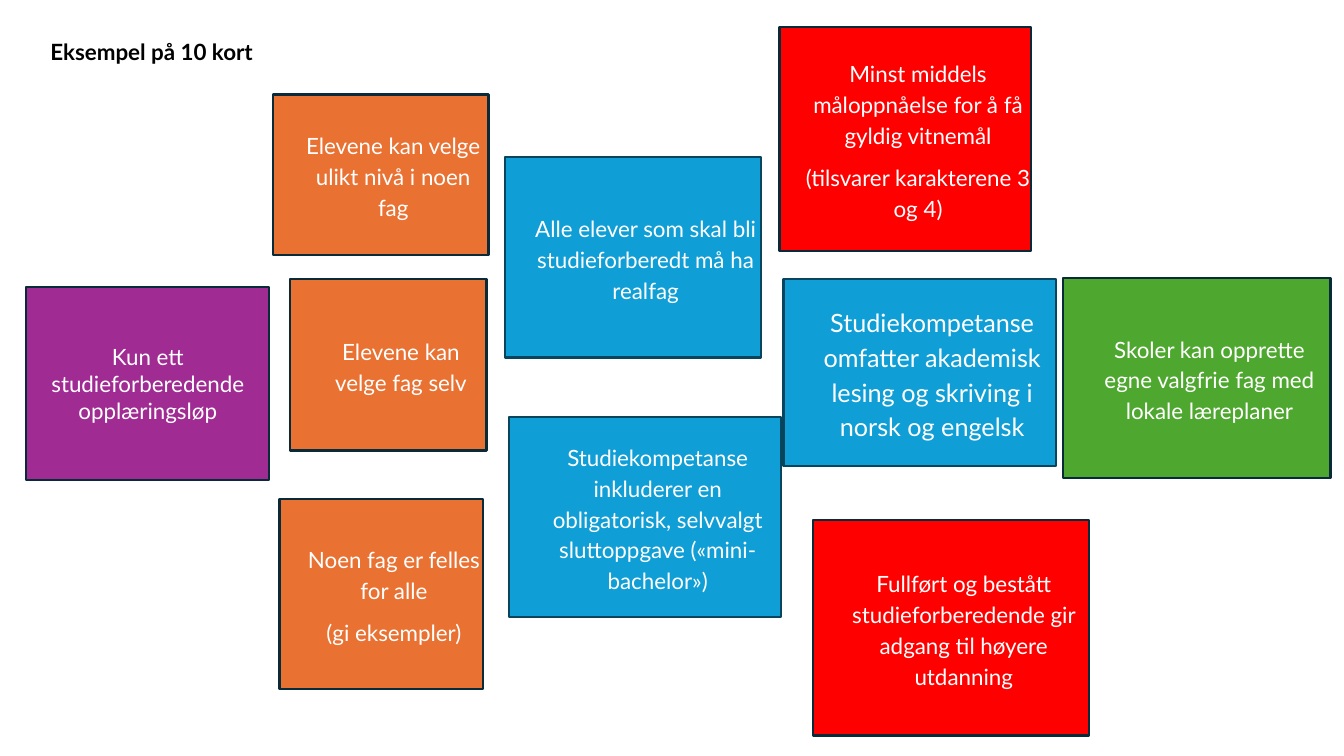
from dataclasses import dataclass

from pptx import Presentation
from pptx import util as u
from pptx.dml.color import RGBColor
from pptx.enum import shapes, text

WHITE = RGBColor(0xFF, 0xFF, 0xFF)
BLACK = RGBColor(0x00, 0x00, 0x00)
PURPLE = RGBColor(0xA0, 0x2B, 0x93)
ORANGE = RGBColor(0xE9, 0x71, 0x32)
BLUE = RGBColor(0x0F, 0x9E, 0xD5)
RED = RGBColor(0xFF, 0x00, 0x00)
GREEN = RGBColor(0x4E, 0xA7, 0x2E)
DARK_EDGE = RGBColor(0x09, 0x2A, 0x39)
BLUE_EDGE = RGBColor(0x07, 0x45, 0x5D)

SLIDE_WIDTH, SLIDE_HEIGHT = u.Inches(13.33), u.Inches(7.5)
FONT = "Lato"
INDENT = u.Inches(0.25)
CENTERED = {"alignment": text.PP_ALIGN.CENTER}
SPACED = CENTERED | {"line_spacing": 1.15, "space_after": u.Pt(8)}
CARD_FRAME = {
    "margin_left": 0, "margin_top": 0, "margin_right": 0, "margin_bottom": 0,
    "word_wrap": True, "vertical_anchor": text.MSO_ANCHOR.MIDDLE,
}
TITLE_FRAME = {
    "margin_left": u.Inches(0.1), "margin_top": u.Inches(0.05),
    "margin_right": u.Inches(0.1), "margin_bottom": u.Inches(0.05),
    "word_wrap": True, "vertical_anchor": text.MSO_ANCHOR.TOP,
    "auto_size": text.MSO_AUTO_SIZE.NONE,
}


@dataclass(frozen=True)
class Area:
    """A rectangle in percent of the slide's width and height."""
    left: float
    top: float
    width: float
    height: float

    def bounds(self) -> dict[str, int]:
        return {
            "left": round(SLIDE_WIDTH * self.left / 100),
            "top": round(SLIDE_HEIGHT * self.top / 100),
            "width": round(SLIDE_WIDTH * self.width / 100),
            "height": round(SLIDE_HEIGHT * self.height / 100),
        }


@dataclass(frozen=True)
class Card:
    area: Area
    color: RGBColor
    lines: tuple[str, ...]
    size: int = 16
    indented: bool = True


TITLE_AREA = Area(3, 4.4, 29, 4.9)
CARDS = (
    Card(Area(1.95, 38, 18.1, 25.5), PURPLE,
         ("Kun ett studieforberedende opplæringsløp",), indented=False),
    Card(Area(21.6, 36.9, 14.6, 22.7), ORANGE, ("Elevene kan velge fag selv",)),
    Card(Area(20.8, 66, 15.15, 25.1), ORANGE,
         ("Noen fag er felles for alle", "(gi eksempler)")),
    Card(Area(20.3, 12.5, 16.05, 21.2), ORANGE,
         ("Elevene kan velge ulikt nivå i noen fag",)),
    Card(Area(37.6, 20.8, 19, 26.5), BLUE,
         ("Alle elever som skal bli studieforberedt må ha realfag",)),
    Card(Area(37.9, 55.2, 20.2, 26.4), BLUE,
         ("Studiekompetanse inkluderer en obligatorisk, selvvalgt "
          "sluttoppgave («mini-bachelor»)",)),
    Card(Area(58, 3.6, 18.75, 29.6), RED,
         ("Minst middels måloppnåelse for å få gyldig vitnemål",
          "(tilsvarer karakterene 3 og 4)")),
    Card(Area(60.5, 68.8, 20.55, 28.5), RED,
         ("Fullført og bestått studieforberedende gir adgang til høyere utdanning",)),
    Card(Area(79.1, 36.8, 19.9, 26.4), GREEN,
         ("Skoler kan opprette egne valgfrie fag med lokale læreplaner",)),
    Card(Area(58.3, 36.9, 20.25, 24.7), BLUE,
         ("Studiekompetanse omfatter akademisk lesing og skriving i norsk og engelsk",),
         size=18),
)


def apply(target: object, values: dict) -> None:
    for name, value in values.items():
        setattr(target, name, value)


def format_font(paragraph, size: int, color: RGBColor, bold: bool = False) -> None:
    apply(paragraph.font, {"name": FONT, "size": u.Pt(size), "bold": bold})
    paragraph.font.color.rgb = color


def set_title(slide, area: Area, wording: str) -> None:
    title = slide.shapes.title
    apply(title, area.bounds())
    apply(title.text_frame, TITLE_FRAME)
    title.text_frame.text = wording
    paragraph = title.text_frame.paragraphs[0]
    paragraph.alignment = text.PP_ALIGN.LEFT
    format_font(paragraph, 16, BLACK, bold=True)


def add_card(slide, card: Card) -> None:
    shape = slide.shapes.add_shape(shapes.MSO_SHAPE.RECTANGLE, **card.area.bounds())
    shape.shadow.inherit = False
    shape.fill.solid()
    shape.fill.fore_color.rgb = card.color
    shape.line.color.rgb = BLUE_EDGE if card.color == BLUE else DARK_EDGE
    shape.line.width = u.Pt(1.5)
    apply(shape.text_frame, CARD_FRAME)
    shape.text_frame.text = "\n".join(card.lines)
    for paragraph in shape.text_frame.paragraphs:
        if card.indented:
            paragraph._p.get_or_add_pPr().set("marL", str(INDENT))
        apply(paragraph, SPACED if card.indented else CENTERED)
        format_font(paragraph, card.size, WHITE)


def main() -> None:
    presentation = Presentation()
    apply(presentation, {"slide_width": SLIDE_WIDTH, "slide_height": SLIDE_HEIGHT})
    slide = presentation.slides.add_slide(
        presentation.slide_layouts.get_by_name("Title Only"))
    set_title(slide, TITLE_AREA, "Eksempel på 10 kort")
    for card in CARDS:
        add_card(slide, card)
    presentation.save("out.pptx")


if __name__ == "__main__":
    main()
